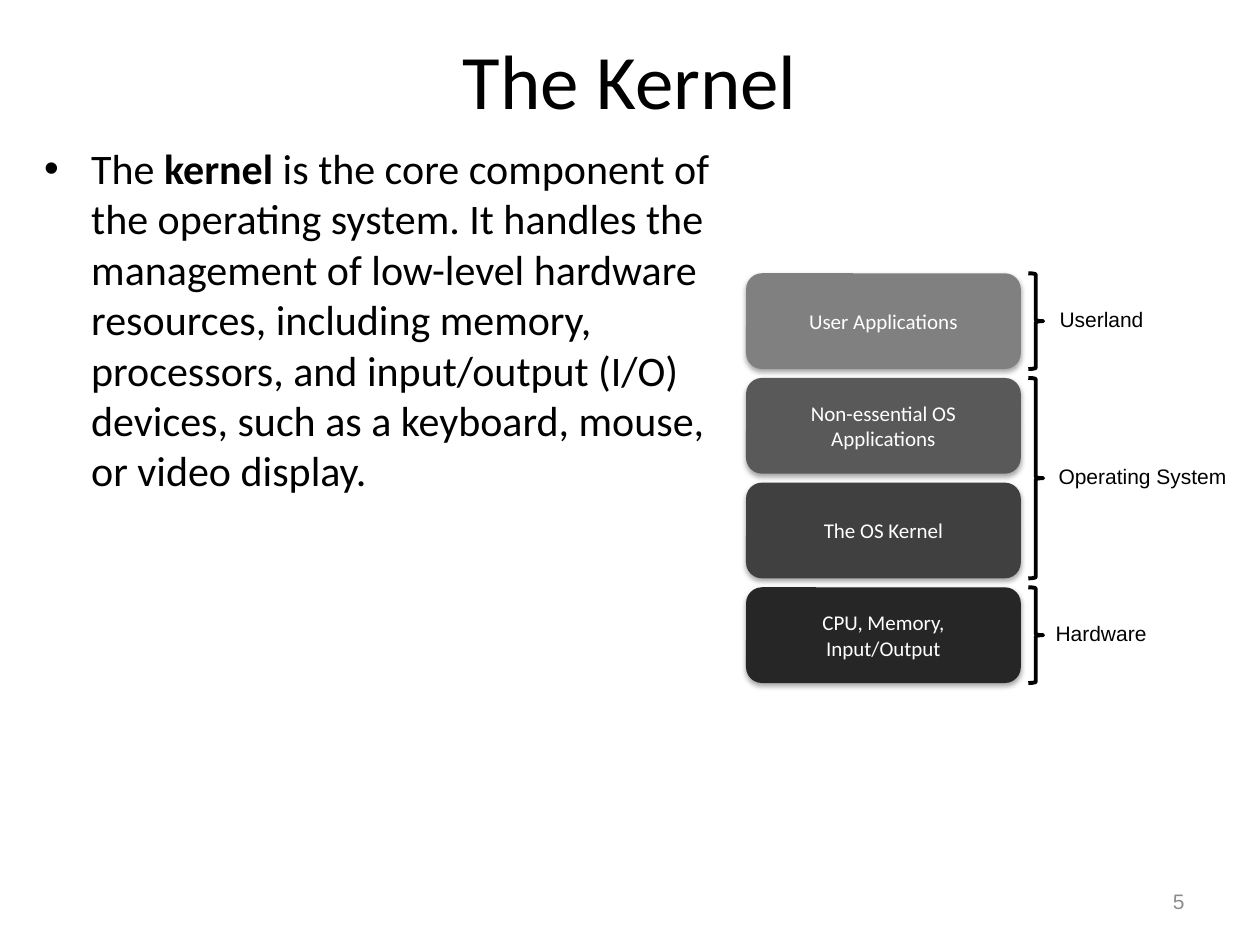
from lxml import etree
from pptx import Presentation
from pptx import util as u
from pptx.dml.color import RGBColor
from pptx.enum import shapes, text
from pptx.oxml import ns

BLACK = RGBColor(0, 0, 0)
WHITE = RGBColor(255, 255, 255)
GREY = RGBColor(0x8C, 0x8C, 0x8C)
LAYERS = [
    ("User Applications", RGBColor(0x80, 0x80, 0x80)),
    ("Non-essential OS Applications", RGBColor(0x59, 0x59, 0x59)),
    ("The OS Kernel", RGBColor(0x40, 0x40, 0x40)),
    ("CPU, Memory, Input/Output", RGBColor(0x26, 0x26, 0x26)),
]
GROUPS = [
    ("Userland", 0, 1, 6.07, 2.24),
    ("Operating System", 1, 2, 6.05, 4.11),
    ("Hardware", 3, 1, 5.99, 2.39),
]
KERNEL = [
    ("The ", False),
    ("kernel ", True),
    ("is the core component of the operating system. It handles the management "
     "of low-level hardware resources, including memory, processors, and "
     "input/output (I/O) devices, such as a keyboard, mouse, or video display.", False),
]


def style(run, size, face, color, bold=False):
    """Set the font of a run."""
    font = run.font
    font.size, font.name, font.bold = u.Pt(size), face, bold
    font.color.rgb = color


def label(slide, box, words, size, face, color, align, anchor, wrap=True):
    """Place one line of text in a box."""
    frame = slide.shapes.add_textbox(*map(u.Cm, box)).text_frame
    frame.word_wrap, frame.vertical_anchor = wrap, anchor
    frame.text = words
    para = frame.paragraphs[0]
    para.alignment = align
    style(para.runs[0], size, face, color)


def body(slide, box):
    """Place the bulleted paragraph about the kernel."""
    frame = slide.shapes.add_textbox(*map(u.Cm, box)).text_frame
    frame.word_wrap = True
    para = frame.paragraphs[0]
    para.space_before = u.Pt(4.8)
    for words, bold in KERNEL:
        run = para.add_run()
        run.text = words
        style(run, 24, "Calibri", BLACK, bold)
    props = para._p.get_or_add_pPr()
    props.set("marL", str(u.Cm(0.95)))
    props.set("indent", str(-u.Cm(0.95)))
    etree.SubElement(props, ns.qn("a:buFont"), typeface="Arial")
    etree.SubElement(props, ns.qn("a:buChar"), char="•")


def shade(shape):
    """Give a shape a soft shadow below it."""
    shape.shadow.inherit = False
    effects = shape._element.spPr.find(ns.qn("a:effectLst"))
    outer = etree.SubElement(
        effects, ns.qn("a:outerShdw"), blurRad=str(u.Pt(3.1)),
        dist=str(u.Pt(1.8)), dir="5400000", rotWithShape="0")
    color = etree.SubElement(outer, ns.qn("a:srgbClr"), val=str(BLACK))
    etree.SubElement(color, ns.qn("a:alpha"), val="35000")


def layer(slide, box, words, color):
    """Draw one layer of the stack."""
    block = slide.shapes.add_shape(
        shapes.MSO_SHAPE.ROUNDED_RECTANGLE, *map(u.Cm, box))
    block.fill.solid()
    block.fill.fore_color.rgb = color
    block.line.fill.background()
    shade(block)
    frame = block.text_frame
    frame.word_wrap, frame.vertical_anchor = True, text.MSO_ANCHOR.MIDDLE
    frame.text = words
    para = frame.paragraphs[0]
    para.alignment = text.PP_ALIGN.CENTER
    style(para.runs[0], 12, "Calibri", WHITE)


def brace(slide, box):
    """Draw a right brace."""
    mark = slide.shapes.add_shape(
        shapes.MSO_SHAPE.RIGHT_BRACE, *map(u.Cm, box))
    mark.fill.background()
    mark.line.color.rgb = BLACK
    mark.line.width = u.Pt(2.25)
    mark.shadow.inherit = False


def stack(slide, box):
    """Draw the layers with their braces and labels."""
    left, top, width, height = box
    gap = 0.18
    tall = (height - gap * (len(LAYERS) - 1)) / len(LAYERS)
    step = tall + gap
    for row, (words, color) in enumerate(LAYERS):
        layer(slide, (left, top + row * step, width, tall), words, color)
    for words, first, count, shift, wide in GROUPS:
        start = top + first * step
        span = count * step - gap
        brace(slide, (left + width + 0.15, start, 0.3, span))
        label(slide, (left + shift, start + span / 2 - 0.43, wide, 0.86), words,
              12, "Arial", BLACK, text.PP_ALIGN.LEFT, text.MSO_ANCHOR.TOP, False)


def main():
    """Build the slide and save it."""
    deck = Presentation()
    deck.slide_width, deck.slide_height = u.Cm(25.4), u.Cm(19.05)
    slide = deck.slides.add_slide(deck.slide_layouts[6])
    middle = text.MSO_ANCHOR.MIDDLE
    label(slide, (1.27, 0, 22.86, 3.18), "The Kernel", 44, "Calibri", BLACK,
          text.PP_ALIGN.CENTER, middle)
    body(slide, (0.64, 2.75, 14.4, 15.44))
    label(slide, (18.2, 17.66, 5.93, 1.01), "5", 12, "Arial", GREY,
          text.PP_ALIGN.RIGHT, middle)
    stack(slide, (15.04, 5.51, 5.54, 8.26))
    deck.save("out.pptx")


if __name__ == "__main__":
    main()
